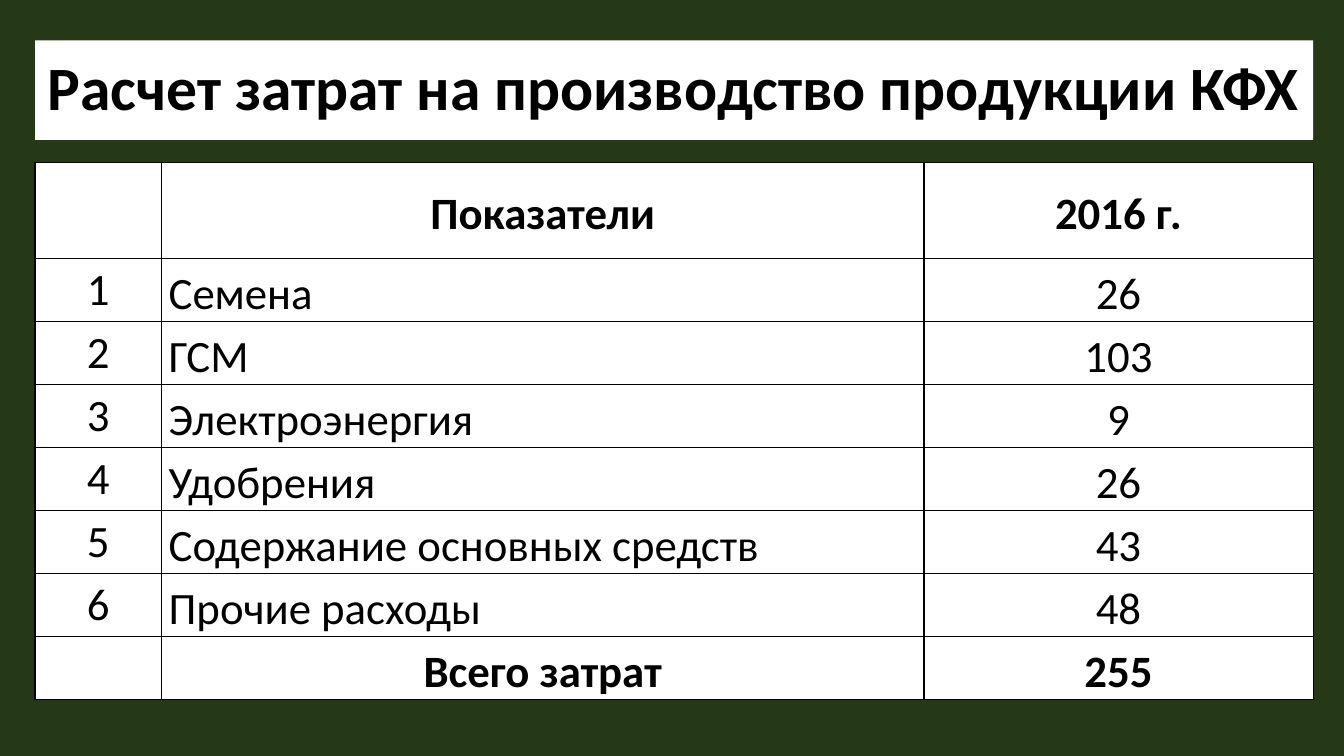
from lxml.etree import SubElement
from pptx import Presentation
from pptx.dml.color import RGBColor
from pptx.enum.text import MSO_ANCHOR as Anchor, MSO_AUTO_SIZE as AutoSize, PP_ALIGN as Align
from pptx.oxml.ns import qn
from pptx.util import Pt

LEFT, WIDTH = 25, 913
BLACK, WHITE, GREEN = "000000", "FFFFFF", "253917"


def paint(fill, color):
    fill.solid()
    fill.fore_color.rgb = RGBColor.from_string(color)


def write(frame, text, size, bold, align, spacing):
    paragraph = frame.paragraphs[0]
    paragraph.alignment = align
    paragraph.line_spacing = spacing
    run = paragraph.add_run()
    run.text = text
    for name, value in {"name": "Calibri", "size": Pt(size), "bold": bold}.items():
        setattr(run.font, name, value)
    paint(run.font.fill, BLACK)


presentation = Presentation()
presentation.slide_width, presentation.slide_height = Pt(960), Pt(540)
slide = presentation.slides.add_slide(presentation.slide_layouts[5])
paint(slide.background.fill, GREEN)

# Title
title = slide.shapes.title
title_box = {"left": LEFT, "top": 28.8, "width": WIDTH, "height": 71.2}
for name, value in title_box.items():
    setattr(title, name, Pt(value))
paint(title.fill, WHITE)
title.text_frame.auto_size = AutoSize.NONE
title.text_frame.vertical_anchor = Anchor.MIDDLE
write(title.text_frame, "Расчет затрат на производство продукции КФХ", 44, True, Align.CENTER, 0.9)

# Cost table
costs = [
    ("Семена", 26),
    ("ГСМ", 103),
    ("Электроэнергия", 9),
    ("Удобрения", 26),
    ("Содержание основных средств", 43),
    ("Прочие расходы", 48),
]
rows = [("", "Показатели", "2016 г.")]
rows += [(number, name, cost) for number, (name, cost) in enumerate(costs, 1)]
rows.append(("", "Всего затрат", sum(cost for name, cost in costs)))
column_widths = [90.5, 544.5, 278]
row_heights = [68.5] + [45] * (len(rows) - 1)

table = slide.shapes.add_table(
    len(rows), len(column_widths), Pt(LEFT), Pt(116), Pt(WIDTH), Pt(sum(row_heights))
).table
for column, width in zip(table.columns, column_widths):
    column.width = Pt(width)
for row, height in zip(table.rows, row_heights):
    row.height = Pt(height)

for row_index, values in enumerate(rows):
    bold = row_index in (0, len(rows) - 1)
    for column_index, value in enumerate(values):
        cell = table.cell(row_index, column_index)
        is_number = column_index == 0
        side = 0.7 if is_number else 5
        cell_format = {
            "margin_left": Pt(side),
            "margin_right": Pt(side),
            "margin_top": Pt(0.7 if is_number else 0),
            "margin_bottom": Pt(0),
            "vertical_anchor": Anchor.MIDDLE,
        }
        for name, setting in cell_format.items():
            setattr(cell, name, setting)
        if value != "":
            align = Align.LEFT if column_index == 1 and not bold else Align.CENTER
            write(cell.text_frame, str(value), 32, bold, align, 1 if is_number else 1.15)
        properties = cell._tc.get_or_add_tcPr()
        for edge in ("a:lnL", "a:lnR", "a:lnT", "a:lnB"):
            line = SubElement(properties, qn(edge), w=str(Pt(1)))
            SubElement(SubElement(line, qn("a:solidFill")), qn("a:srgbClr"), val=BLACK)
        paint(cell.fill, WHITE)

presentation.save("out.pptx")
